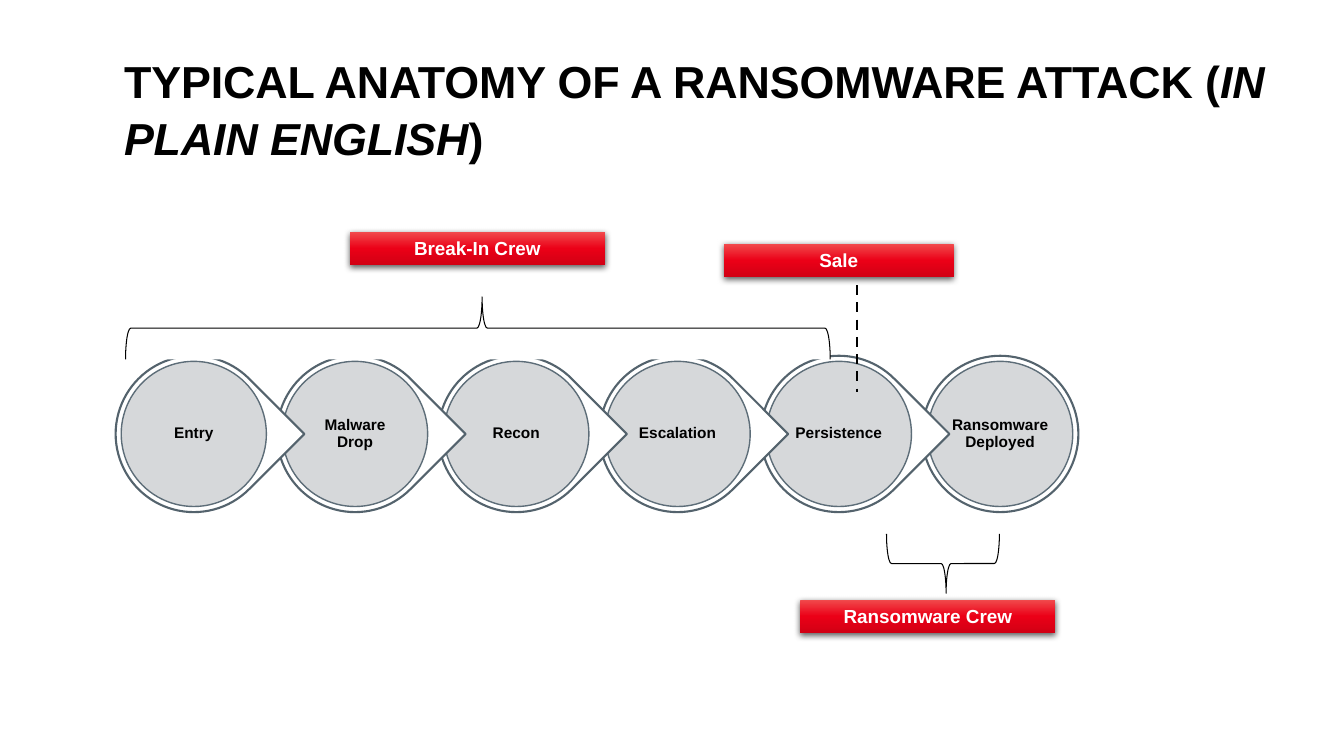
from dataclasses import dataclass

from lxml.etree import SubElement
from pptx import Presentation
from pptx.dml.color import RGBColor
from pptx.enum.dml import MSO_LINE
from pptx.enum.shapes import MSO_CONNECTOR, MSO_SHAPE
from pptx.enum.text import MSO_ANCHOR, MSO_AUTO_SIZE, PP_ALIGN
from pptx.oxml.ns import qn
from pptx.util import Emu, Inches, Pt


@dataclass(frozen=True)
class Theme:
    font: str = "Arial"
    ink: str = "000000"
    paper: str = "FFFFFF"
    disc: str = "D2D4D6"
    rim: str = "5D6D78"
    edge: str = "54636D"
    reds: tuple[str, ...] = ("F14B4D", "EB0017", "D10014")
    title: float = 32
    label: float = 13.5
    stage: float = 11


@dataclass(frozen=True)
class Box:
    """Left and width in % of slide width, top and height in % of its height."""
    left: float
    top: float
    width: float
    height: float


@dataclass(frozen=True)
class Label:
    text: str
    box: Box


@dataclass(frozen=True)
class Brace:
    box: Box
    turn: int
    tip: float


THEME = Theme()
WIDE, HIGH = Inches(13.333), Inches(7.5)

# Chain of stages: centres spaced evenly along one row
STAGES = ("Entry", "Malware Drop", "Recon", "Escalation", "Persistence",
          "Ransomware Deployed")
FIRST, STEP, ROW = 14.42, 12, 57.4
RING, DISC = 11.63, 10.8

TITLE = Box(9.23, 6.8, 87.68, 14.4)
TITLE_RUNS = (("TYPICAL ANATOMY OF A RANSOMWARE ATTACK (", False),
              ("IN PLAIN ENGLISH", True), (")", False))
BRACES = (Brace(Box(9.34, 39.27, 52.43, 8.27), 90, 0.494),
          Brace(Box(65.96, 70.6, 8.4, 7.87), 270, 0.528))
LABELS = (Label("Break-In Crew", Box(26.03, 30.67, 18.98, 4.4)),
          Label("Sale", Box(53.85, 32.27, 17.1, 4.4)),
          Label("Ransomware Crew", Box(59.55, 79.33, 18.98, 4.4)))
SALE_X, SALE_TOP, SALE_END = 63.75, 37.73, 51.87


def across(share: float) -> Emu:
    return Emu(round(WIDE * share / 100))


def down(share: float) -> Emu:
    return Emu(round(HIGH * share / 100))


def place(box: Box) -> tuple[Emu, Emu, Emu, Emu]:
    return across(box.left), down(box.top), across(box.width), down(box.height)


def style(run, size: float, tint: str) -> None:
    font = run.font
    font.name, font.size, font.bold = THEME.font, Pt(size), True
    font.color.rgb = RGBColor.from_string(tint)


def write(shape, text: str, size: float, tint: str):
    frame = shape.text_frame
    frame.text = text
    frame.word_wrap = True
    para = frame.paragraphs[0]
    para.alignment = PP_ALIGN.CENTER
    style(para.runs[0], size, tint)
    return frame


def draw(slide, kind, spot, fill: str, line: str, width: float):
    shape = slide.shapes.add_shape(kind, *spot)
    shape.shadow.inherit = False
    shape.fill.solid()
    shape.fill.fore_color.rgb = RGBColor.from_string(fill)
    shape.line.color.rgb = RGBColor.from_string(line)
    shape.line.width = Pt(width)
    return shape


def add_title(slide) -> None:
    frame = slide.shapes.add_textbox(*place(TITLE)).text_frame
    frame.word_wrap = True
    frame.auto_size = MSO_AUTO_SIZE.SHAPE_TO_FIT_TEXT
    frame.margin_left = frame.margin_right = 0
    frame.margin_top = frame.margin_bottom = 0
    para = frame.paragraphs[0]
    para.line_spacing = 1.05
    for text, slant in TITLE_RUNS:
        run = para.add_run()
        run.text = text
        style(run, THEME.title, THEME.ink)
        run.font.italic = slant
        run.font._element.set("spc", "-10")


def add_stage(slide, index: int, text: str) -> None:
    def round_at(share: float) -> tuple[Emu, Emu, Emu, Emu]:
        side = across(share)
        mid = across(FIRST + index * STEP)
        return mid - side // 2, down(ROW) - side // 2, side, side

    # Outer ring points to the next stage, except for the last one
    last = index == len(STAGES) - 1
    kind = MSO_SHAPE.OVAL if last else MSO_SHAPE.TEAR
    ring = draw(slide, kind, round_at(RING), THEME.paper, THEME.edge, 1.5)
    ring.rotation = 0 if last else 45

    disc = draw(slide, MSO_SHAPE.OVAL, round_at(DISC), THEME.disc, THEME.rim, 1)
    tint = disc._element.spPr.find(qn("a:solidFill"))[0]
    SubElement(tint, qn("a:alpha"), val="90000")
    frame = write(disc, text, THEME.stage, THEME.ink)
    frame.vertical_anchor = MSO_ANCHOR.MIDDLE
    frame.margin_left = frame.margin_right = Inches(0.01)
    frame.margin_top = frame.margin_bottom = Inches(0.02)
    frame.paragraphs[0].line_spacing = 0.9


def add_brace(slide, brace: Brace) -> None:
    # A quarter turn swaps the sides around the same centre
    left, top, width, height = place(brace.box)
    shift = (width - height) // 2
    spot = (left + shift, top - shift, height, width)
    shape = draw(slide, MSO_SHAPE.LEFT_BRACE, spot, THEME.paper, THEME.ink, 0.75)
    shape.rotation = brace.turn
    shape.adjustments[0] = 0.083
    shape.adjustments[1] = brace.tip


def add_label(slide, label: Label) -> None:
    shape = slide.shapes.add_shape(MSO_SHAPE.RECTANGLE, *place(label.box))
    shape.line.fill.background()
    shape.fill.gradient()
    shape.fill.gradient_angle = 270
    shape.shadow.inherit = False
    props = shape._element.spPr

    # Three red stops from top to bottom
    stops = props.find(qn("a:gradFill")).find(qn("a:gsLst"))
    stops.clear()
    for pos, tint in zip((0, 50000, 100000), THEME.reds):
        stop = SubElement(stops, qn("a:gs"), pos=str(pos))
        SubElement(stop, qn("a:srgbClr"), val=tint)

    # Soft shadow below
    shade = SubElement(props.find(qn("a:effectLst")), qn("a:outerShdw"),
                       blurRad=str(Pt(4.5)), dist=str(Pt(1.5)),
                       dir="5400000", rotWithShape="0")
    tone = SubElement(shade, qn("a:srgbClr"), val=THEME.ink)
    SubElement(tone, qn("a:alpha"), val="63000")
    frame = write(shape, label.text, THEME.label, THEME.paper)
    frame.vertical_anchor = MSO_ANCHOR.TOP
    frame.auto_size = MSO_AUTO_SIZE.SHAPE_TO_FIT_TEXT


def add_dash(slide) -> None:
    x = across(SALE_X)
    dash = slide.shapes.add_connector(MSO_CONNECTOR.STRAIGHT, x, down(SALE_TOP),
                                      x, down(SALE_END))
    dash.line.color.rgb = RGBColor.from_string(THEME.ink)
    dash.line.width = Pt(1.75)
    dash.line.dash_style = MSO_LINE.DASH
    SubElement(dash._element.spPr, qn("a:effectLst"))


def main() -> None:
    deck = Presentation()
    deck.slide_width, deck.slide_height = WIDE, HIGH
    slide = deck.slides.add_slide(deck.slide_layouts[6])
    add_title(slide)
    # Right to left, so each point overlaps the next stage
    for index, text in reversed(list(enumerate(STAGES))):
        add_stage(slide, index, text)
    for brace in BRACES:
        add_brace(slide, brace)
    add_dash(slide)
    for label in LABELS:
        add_label(slide, label)
    deck.save("out.pptx")


if __name__ == "__main__":
    main()
